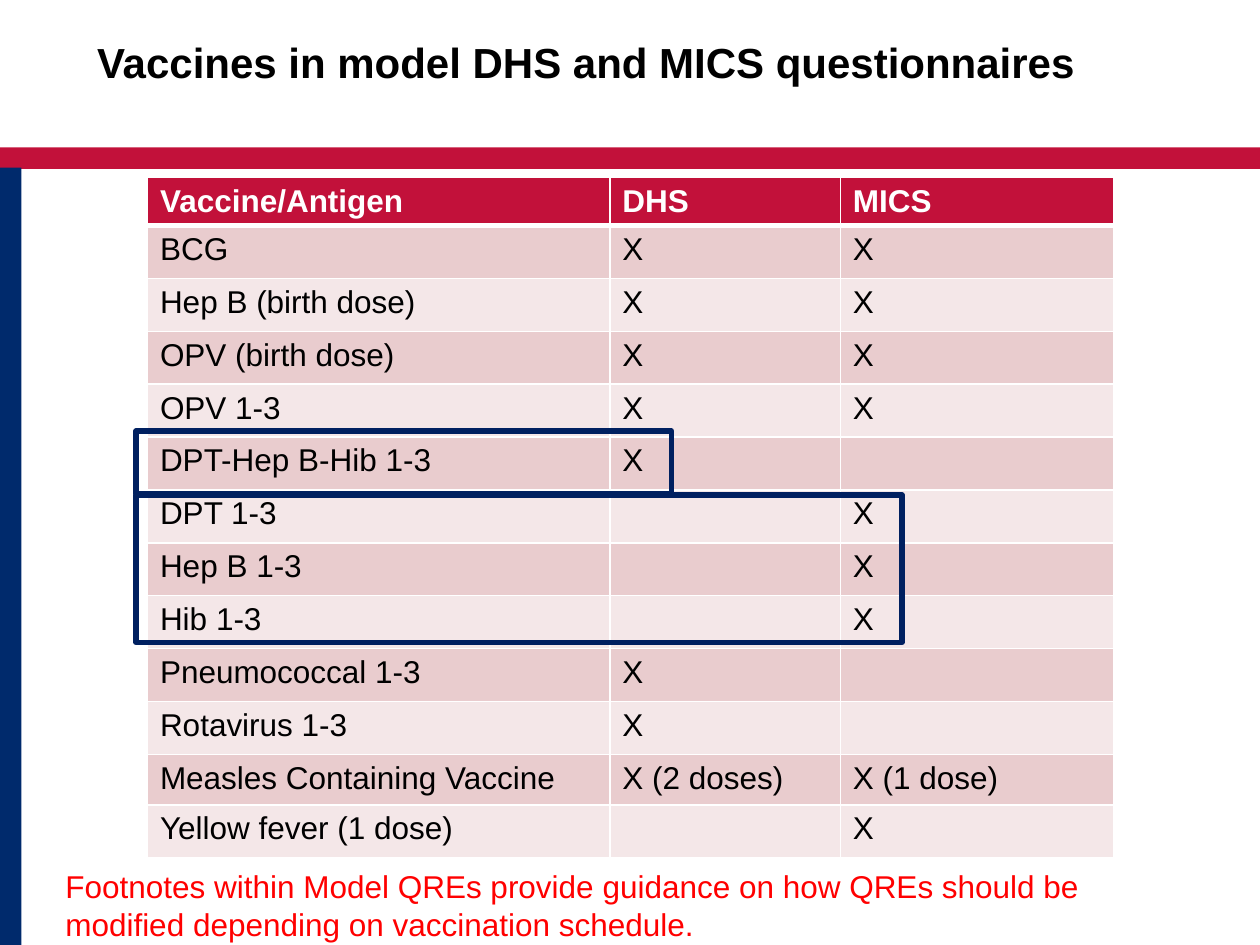
from lxml.etree import SubElement
from pptx import Presentation
from pptx.dml.color import RGBColor
from pptx.enum.shapes import MSO_SHAPE as Shape
from pptx.enum.text import MSO_ANCHOR as Anchor, PP_ALIGN as Align
from pptx.oxml.ns import qn
from pptx.util import Inches, Pt

COLORS = {
    "red": "C2113A", "blue": "002A6C", "navy": "002060", "note": "FF0000",
    "dark": "E9CCCE", "light": "F4E7E8", "white": "FFFFFF", "black": "000000",
}


def rgb(name):
    return RGBColor.from_string(COLORS[name])


def write(frame, text, size=18, color="black", bold=False):
    frame.word_wrap = True
    para = frame.paragraphs[0]
    para.alignment = Align.LEFT
    para.font.size = Pt(size)
    run = para.add_run()
    run.text = text
    font = run.font
    font.name, font.size, font.bold = "Arial", Pt(size), bold
    font.color.rgb = rgb(color)


deck = Presentation()
deck.slide_width, deck.slide_height = Inches(10), Inches(7.5)
slide = deck.slides.add_slide(deck.slide_layouts[5])
shapes = slide.shapes

# Title
title = shapes.title
title.left, title.top = Inches(0.67), Inches(0.25)
title.width, title.height = Inches(8.5), Inches(0.67)
title.text_frame.vertical_anchor = Anchor.TOP
title.text_frame.margin_top = Inches(0.04)
write(title.text_frame, "Vaccines in model DHS and MICS questionnaires",
      size=24, bold=True)

# Red band and blue side bar
for box, color in [((0, 1.17, 10, 0.17), "red"),
                   ((0, 1.33, 0.17, 6.17), "blue")]:
    bar = shapes.add_shape(Shape.RECTANGLE, *map(Inches, box))
    bar.shadow.inherit = False
    bar.fill.solid()
    bar.fill.fore_color.rgb = rgb(color)
    bar.line.fill.background()

# Vaccine table
rows = [
    ("Vaccine/Antigen", "DHS", "MICS"),
    ("BCG", "X", "X"),
    ("Hep B (birth dose)", "X", "X"),
    ("OPV (birth dose)", "X", "X"),
    ("OPV 1-3", "X", "X"),
    ("DPT-Hep B-Hib 1-3", "X", ""),
    ("DPT 1-3", "", "X"),
    ("Hep B 1-3", "", "X"),
    ("Hib 1-3", "", "X"),
    ("Pneumococcal 1-3", "X", ""),
    ("Rotavirus 1-3", "X", ""),
    ("Measles Containing Vaccine", "X (2 doses)", "X (1 dose)"),
    ("Yellow fever (1 dose)", "", "X"),
]
widths = [3.67, 1.83, 2.17]
heights = [0.37] + [0.42] * 10 + [0.4, 0.42]
table = shapes.add_table(
    len(rows), len(widths), Inches(1.17), Inches(1.41),
    Inches(sum(widths)), Inches(sum(heights))).table
for col, width in zip(table.columns, widths):
    col.width = Inches(width)
for r, (row, height) in enumerate(zip(rows, heights)):
    table.rows[r].height = Inches(height)
    head = r == 0
    for c, text in enumerate(row):
        cell = table.cell(r, c)
        if text:
            write(cell.text_frame, text, bold=head,
                  color="white" if head else "black")
        # Borders come before the fill in the cell properties
        props = cell._tc.get_or_add_tcPr()
        for side in ("lnL", "lnR", "lnT", "lnB"):
            thick = (head and side == "lnB") or (r == 1 and side == "lnT")
            edge = SubElement(props, qn("a:" + side),
                              w=str(Pt(3 if thick else 1)))
            fill = SubElement(edge, qn("a:solidFill"))
            SubElement(fill, qn("a:srgbClr"), val=COLORS["white"])
        cell.fill.solid()
        cell.fill.fore_color.rgb = rgb(
            "red" if head else "dark" if r % 2 else "light")

# Frames around the combined and the separate vaccines
for box in [(1.08, 3.42, 4.25, 0.5), (1.08, 3.93, 6.08, 1.17)]:
    frame = shapes.add_shape(Shape.RECTANGLE, *map(Inches, box))
    frame.shadow.inherit = False
    frame.fill.background()
    frame.line.color.rgb = rgb("navy")
    frame.line.width = Pt(3)
    SubElement(frame.line._get_or_add_ln(), qn("a:round"))

# Footnote
note = shapes.add_textbox(Inches(0.42), Inches(6.83), Inches(9.08), Inches(0.71))
write(note.text_frame,
      "Footnotes within Model QREs provide guidance on how QREs should be "
      "modified depending on vaccination schedule.", color="note")

deck.save("out.pptx")
